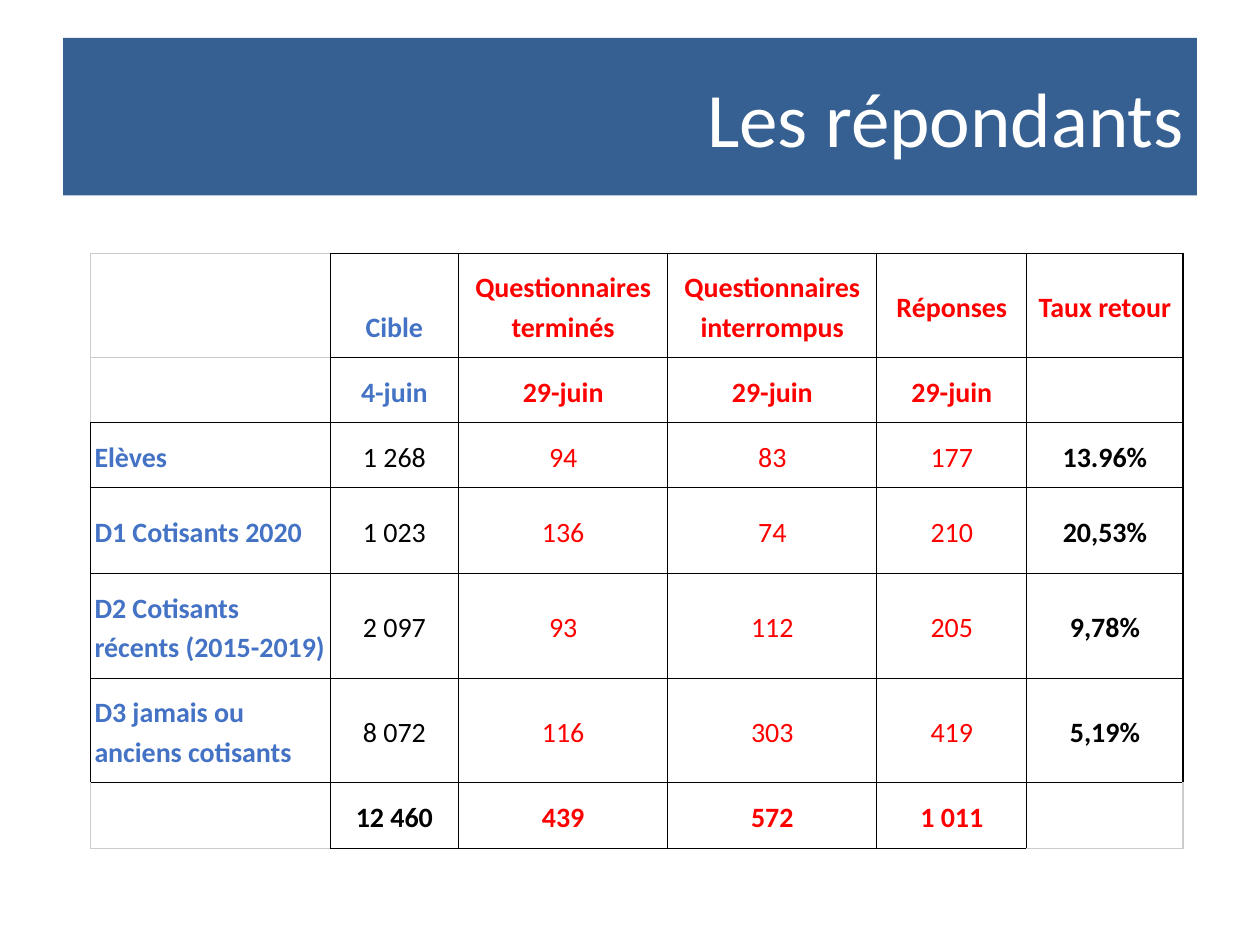
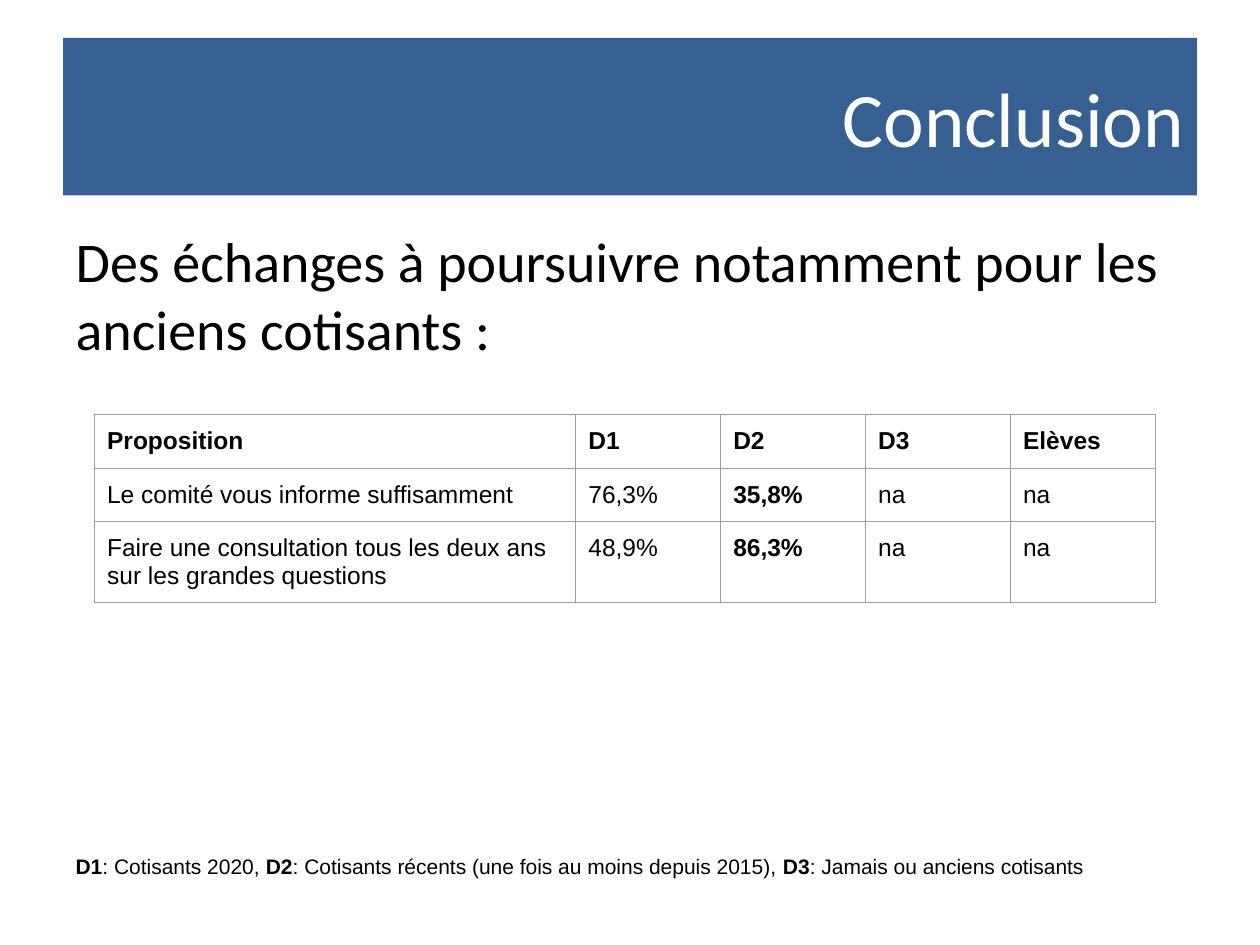
"""Builds two survey slides: the respondents table and the conclusion."""
from lxml import etree
from pptx import Presentation, util as u
from pptx.dml.color import RGBColor
from pptx.enum import text
from pptx.oxml.ns import qn

BAND = RGBColor(0x36, 0x60, 0x92)
WHITE = RGBColor(0xFF, 0xFF, 0xFF)
BLACK = RGBColor(0, 0, 0)
BLUE = RGBColor(0x44, 0x72, 0xC4)
RED = RGBColor(0xFF, 0, 0)
PALE = RGBColor(0xCC, 0xCC, 0xCC)
GREY = RGBColor(0x9E, 0x9E, 0x9E)

deck = Presentation()
deck.slide_width = u.Inches(10)
deck.slide_height = u.Inches(7.5)
UNIT = deck.slide_width // 100
MIDDLE = text.MSO_ANCHOR.MIDDLE
CENTER = text.PP_ALIGN.CENTER


def style(para, size, face, color, bold=False):
    for span in para.runs:
        span.font.size = u.Pt(size)
        span.font.name = face
        span.font.color.rgb = color
        span.font.bold = bold


def add_grid(page, left, top, widths, heights, rows, line, exceptions, margin):
    frame = page.shapes.add_table(
        len(heights), len(widths), int(left * UNIT), int(top * UNIT),
        int(sum(widths) * UNIT), int(sum(heights) * UNIT))
    table = frame.table
    table.first_row = table.horz_banding = False
    for column, width in zip(table.columns, widths):
        column.width = int(width * UNIT)
    for row, height in zip(table.rows, heights):
        row.height = int(height * UNIT)
    for r, values in enumerate(rows):
        for c, value in enumerate(values):
            cell = table.cell(r, c)
            cell.text_frame.text = value
            cell.margin_left = cell.margin_right = int(margin * UNIT)
            cell.margin_top = cell.margin_bottom = UNIT
            properties = cell._tc.get_or_add_tcPr()
            for side in "LRTB":
                color = PALE if side in exceptions.get((r, c), "") else line
                edge = etree.SubElement(properties, qn(f"a:ln{side}"), w=str(u.Pt(0.75)))
                solid = etree.SubElement(edge, qn("a:solidFill"))
                etree.SubElement(solid, qn("a:srgbClr"), val=str(color))
            cell.fill.background()
    return table


pages = []
for layout, heading in ((5, "Les répondants"), (1, "Conclusion")):
    page = deck.slides.add_slide(deck.slide_layouts[layout])
    title = page.shapes.title
    title.left, title.top = 5 * UNIT, 3 * UNIT
    title.width, title.height = 90 * UNIT, int(12.5 * UNIT)
    title.fill.solid()
    title.fill.fore_color.rgb = BAND
    title.text_frame.text = heading
    title.text_frame.vertical_anchor = MIDDLE
    title.text_frame.auto_size = text.MSO_AUTO_SIZE.NONE
    para = title.text_frame.paragraphs[0]
    para.alignment = text.PP_ALIGN.RIGHT
    style(para, 44, "Calibri", WHITE)
    pages.append(page)
respondents, conclusion = pages

answers = [
    ["", "Cible", "Questionnaires\nterminés", "Questionnaires\ninterrompus", "Réponses", "Taux retour"],
    ["", "4-juin", "29-juin", "29-juin", "29-juin", ""],
    ["Elèves", "1 268", "94", "83", "177", "13.96%"],
    ["D1 Cotisants 2020", "1 023", "136", "74", "210", "20,53%"],
    ["D2 Cotisants récents (2015-2019)", "2 097", "93", "112", "205", "9,78%"],
    ["D3 jamais ou anciens cotisants", "8 072", "116", "303", "419", "5,19%"],
    ["", "12 460", "439", "572", "1 011", ""],
]
table = add_grid(
    respondents, 7.2, 20.1, [19, 10.2, 16.6, 16.6, 11.9, 12.4],
    [8.3, 5.1, 5.2, 6.8, 8.3, 8.3, 5.2], answers, BLACK,
    {(0, 0): "LTB", (1, 0): "LT", (6, 0): "LB", (6, 5): "RB"}, 0.3)
for r in range(len(answers)):
    is_data = 2 <= r <= 5
    for c in range(len(answers[0])):
        cell = table.cell(r, c)
        cell.vertical_anchor = MIDDLE
        if c == 0 or (c == 1 and r < 2):
            color = BLUE
        elif c == 1 or (c == 5 and is_data):
            color = BLACK
        else:
            color = RED
        for para in cell.text_frame.paragraphs:
            para.line_spacing = 1.15
            para.alignment = CENTER if c else text.PP_ALIGN.LEFT
            style(para, 16, "Calibri", color, not (is_data and 1 <= c <= 4))
table.cell(0, 1).vertical_anchor = text.MSO_ANCHOR.BOTTOM

body = conclusion.placeholders[1]
body.left, body.top = 5 * UNIT, int(17.5 * UNIT)
body.width, body.height = 90 * UNIT, int(52.5 * UNIT)
body.text_frame.auto_size = text.MSO_AUTO_SIZE.NONE
body.text_frame.text = "Des échanges à poursuivre notamment pour les anciens cotisants :"
message = body.text_frame.paragraphs[0]
legend = body.text_frame.add_paragraph()
for para in (message, legend):
    properties = para._p.get_or_add_pPr()
    properties.set("marL", "0")
    properties.set("indent", "0")
    etree.SubElement(properties, qn("a:buNone"))
message.space_before = u.Pt(0)
style(message, 32, "Calibri", BLACK)

legend.space_before = u.Pt(279)
legend.line_spacing = 1.15
for wording in ("D1", ": Cotisants 2020,", " D2",
                ": Cotisants récents (une fois au moins depuis 2015),",
                " D3", ": Jamais ou anciens cotisants"):
    legend.add_run().text = wording
style(legend, 12, "Arial", BLACK)
for span in legend.runs[::2]:
    span.font.bold = True

proposals = [
    ["Proposition", "D1", "D2", "D3", "Elèves"],
    ["Le comité vous informe suffisamment", "76,3%", "35,8%", "na", "na"],
    ["Faire une consultation tous les deux ans sur les grandes questions", "48,9%", "86,3%", "na", "na"],
]
table = add_grid(conclusion, 7.5, 32.9, [38.2] + [11.5] * 4, [4.3, 4.2, 6.4],
                 proposals, GREY, {}, 1)
for r in range(len(proposals)):
    for c in range(len(proposals[0])):
        style(table.cell(r, c).text_frame.paragraphs[0], 14, "Arial", BLACK, r == 0 or c == 2)

deck.save("out.pptx")
